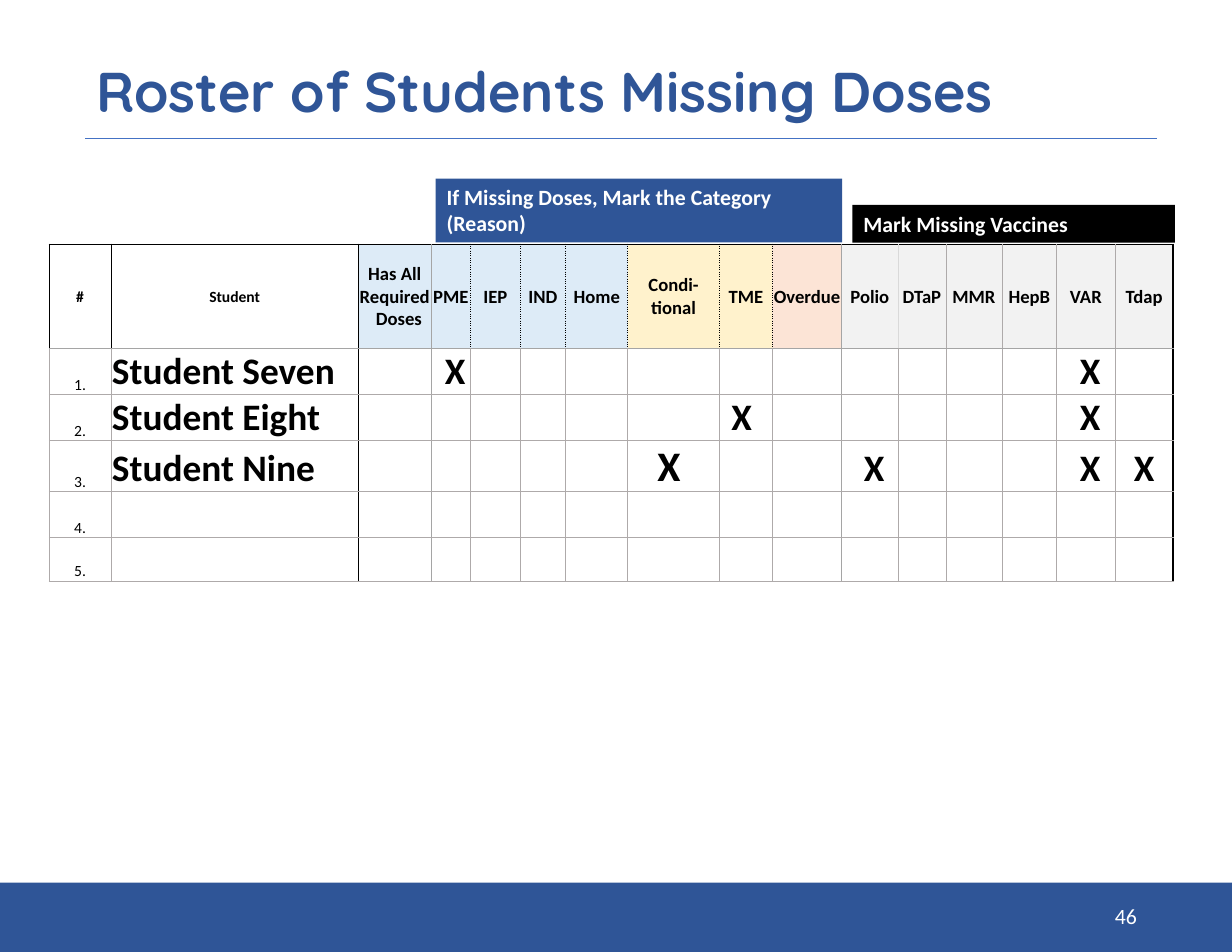
from pptx import Presentation
from pptx.dml.color import RGBColor
from pptx.enum.shapes import MSO_CONNECTOR as CON, MSO_SHAPE as SHP
from pptx.enum.text import MSO_ANCHOR as ANC, PP_ALIGN as AL
from pptx.oxml.ns import qn
from pptx.util import Pt
from lxml.etree import SubElement as Sub

BLUE, BLACK, WHITE = "2F5597", "000000", "FFFFFF"
NB = chr(160)  # no-break space


def rgb(hue):
    return RGBColor.from_string(hue)


def write(frame, text, size, hue, bold=True, font="Calibri", align=AL.LEFT):
    para = frame.paragraphs[0]
    para.alignment = align
    run = para.add_run()
    run.text = text
    run.font.name, run.font.size, run.font.bold = font, Pt(size), bold
    run.font.color.rgb = rgb(hue)
    return para


prs = Presentation()
prs.slide_width, prs.slide_height = Pt(792), Pt(612)
shapes = prs.slides.add_slide(prs.slide_layouts[6]).shapes

# Rule under the title
rule = shapes.add_connector(CON.STRAIGHT, Pt(54.7), Pt(89.3), Pt(743.8), Pt(89.3))
rule.line.color.rgb = rgb("4472C4")
rule.line.width = Pt(0.75)
Sub(rule._element.spPr, qn("a:effectLst"))

# Footer bar and column group labels
bars = [
    (0, 567.4, 792, 44.6, BLUE, ""),
    (280, 114.8, 261.4, 41, BLUE, "If Missing Doses, Mark the Category (Reason)"),
    (547.9, 131.8, 207.4, 24.2, BLACK, "Mark Missing Vaccines"),
]
for x, y, w, h, hue, text in bars:
    bar = shapes.add_shape(SHP.RECTANGLE, Pt(x), Pt(y), Pt(w), Pt(h))
    bar.shadow.inherit = False
    bar.fill.solid()
    bar.fill.fore_color.rgb = rgb(hue)
    bar.line.fill.background()
    if text:
        bar.text_frame.word_wrap = True
        bar.text_frame.vertical_anchor = ANC.TOP
        write(bar.text_frame, text, 14, WHITE)

# Title and page number
title = shapes.add_textbox(Pt(54.7), Pt(32.4), Pt(683.3), Pt(56.9)).text_frame
page = shapes.add_textbox(Pt(559.4), Pt(572.4), Pt(178.6), Pt(32.4)).text_frame
for frame in (title, page):
    frame.word_wrap = True
    frame.vertical_anchor = ANC.MIDDLE
para = write(title, "Roster of Students Missing Doses", 36, BLUE, font="Quicksand")
para.line_spacing = 0.9
write(page, "46", 14, WHITE, bold=False, align=AL.RIGHT)

# Roster: heading, column width, heading fill
cols = [
    ("#", 39.6, None), ("Student", 159.1, None),
    (f"Has All Required{NB} Doses", 46.8, "DDEBF7"),
    ("PME", 25.4, "DDEBF7"), ("IEP", 31.7, "DDEBF7"),
    ("IND", 29.5, "DDEBF7"), ("Home", 39.8, "DDEBF7"),
    ("Condi-tional", 59, "FFF2CC"), ("TME", 34, "FFF2CC"),
    ("Overdue", 44.6, "FCE4D6"),
    ("Polio", 36.2, "F2F2F2"), ("DTaP", 30.8, "F2F2F2"),
    ("MMR", 36, "F2F2F2"), ("HepB", 35.3, "F2F2F2"),
    ("VAR", 37.4, "F2F2F2"), ("Tdap", 37.4, "F2F2F2"),
]
rows = [67, 28, 28, 28, 29.4, 28]
names = [f"Student Seven{NB}", f"Student Eight{NB}", "Student Nine"]
marks = {
    (1, 3): f"{NB}X", (1, 14): f"{NB}X",
    (2, 8): f"X{NB}", (2, 14): f"{NB}X",
    (3, 7): f"X{NB}", (3, 10): f"{NB}X", (3, 14): f"{NB}X", (3, 15): "X",
}

# Border kinds, then the column edges from left to right
GRID, GREY, PALE = ("AEAAAA", 0.5), ("A5A5A5", 0.5), ("D9D9D9", 0.5)
THICK, THIN, DOT = (BLACK, 1), (BLACK, 0.5), (BLACK, 0.5, "sysDot")
head = [THICK, THIN, THICK, GREY] + [DOT] * 6 + [GREY, PALE] + [GRID] * 4 + [THICK]
body = [GRID] * 2 + [THICK, GREY] + [GRID] * 6 + [GREY] + [GRID] * 5 + [THICK]
flat = [THICK, GREY] + [GRID] * 5

table = shapes.add_table(len(rows), len(cols), Pt(31.7), Pt(157),
                         Pt(sum(c[1] for c in cols)), Pt(sum(rows))).table
table.first_row = table.horz_banding = False
for col, (_, wide, _) in zip(table.columns, cols):
    col.width = Pt(wide)
for row, high in zip(table.rows, rows):
    row.height = Pt(high)

for r in range(len(rows)):
    edge = body if r else head
    for c, (label, _, fill) in enumerate(cols):
        cell = table.cell(r, c)
        cell.margin_left = cell.margin_right = cell.margin_top = Pt(0.7)
        cell.margin_bottom = Pt(0)
        cell.vertical_anchor = ANC.BOTTOM if r else ANC.MIDDLE

        # Borders go before the fill
        props = cell._tc.get_or_add_tcPr()
        sides = {"L": edge[c], "R": edge[c + 1], "T": flat[r], "B": flat[r + 1]}
        for side, (hue, width, *dash) in sides.items():
            line = Sub(props, qn(f"a:ln{side}"), w=str(Pt(width)))
            Sub(Sub(line, qn("a:solidFill")), qn("a:srgbClr"), val=hue)
            if dash:
                Sub(line, qn("a:prstDash"), val=dash[0])
        if r == 0 and fill:
            cell.fill.solid()
            cell.fill.fore_color.rgb = rgb(fill)
        else:
            cell.fill.background()

        # Cell text
        if r == 0:
            write(cell.text_frame, label, 10 if c < 2 else 12, BLACK, align=AL.CENTER)
        elif c == 0:
            write(cell.text_frame, f"{r}.", 10, BLACK, bold=False, align=AL.CENTER)
        elif c == 1 and r <= len(names):
            write(cell.text_frame, names[r - 1], 24, BLACK)
        elif (r, c) in marks:
            size = 27 if (r, c) == (3, 7) else 24
            write(cell.text_frame, marks[r, c], size, BLACK, align=AL.CENTER)

prs.save("out.pptx")
